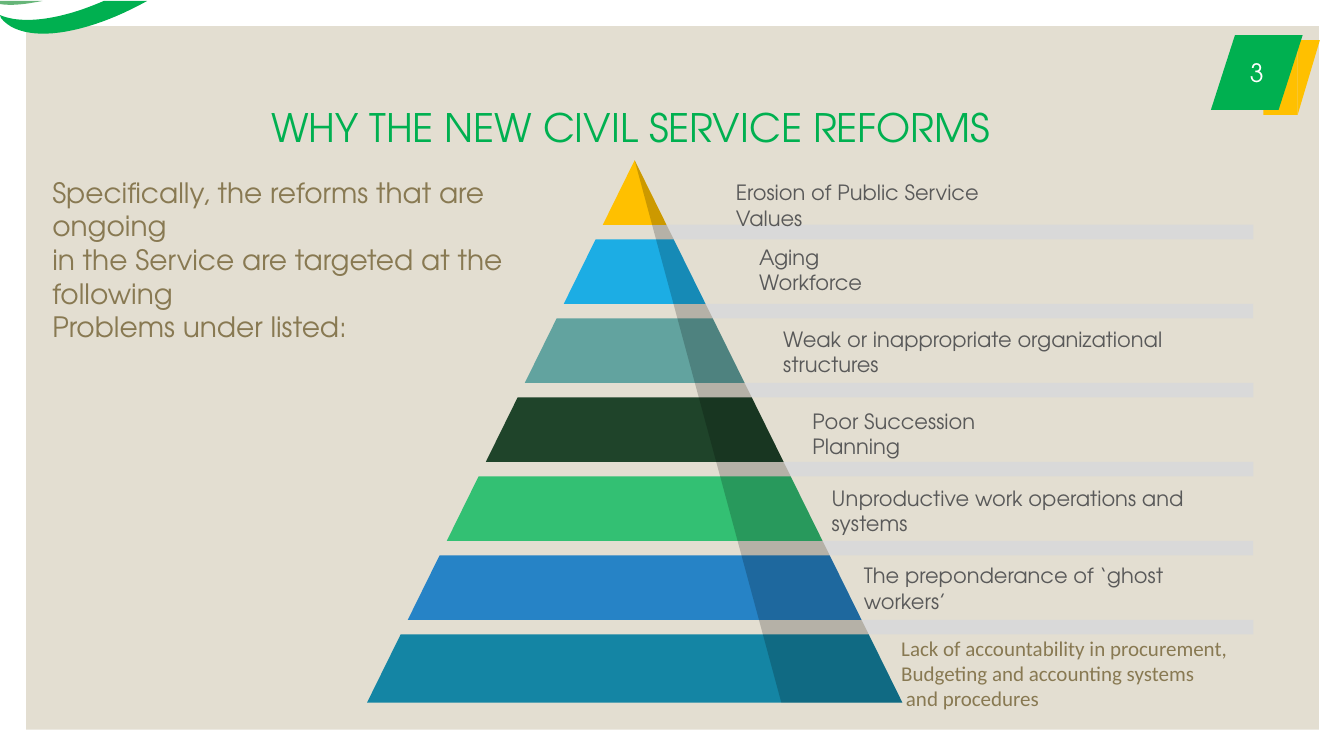
from collections import namedtuple
from dataclasses import dataclass

import pptx
import pptx.dml.color
import pptx.enum.shapes
import pptx.enum.text
import pptx.oxml
import pptx.oxml.ns
import pptx.util

Inches = pptx.util.Inches
MSO_SHAPE = pptx.enum.shapes.MSO_SHAPE
ANCHOR = pptx.enum.text.MSO_ANCHOR
ALIGN = pptx.enum.text.PP_ALIGN
Box = namedtuple("Box", "left top width height")
Label = namedtuple("Label", "lines left top width height font color")


@dataclass(frozen=True)
class Theme:
    font: str = "TeX Gyre Adventor"
    note_font: str = "Calibri"
    panel: str = "E3DED1"
    green: str = "00B050"
    leaf: str = "148E31"
    gold: str = "FFC000"
    bar: str = "D9D9D9"
    shade: str = "000000"
    white: str = "FFFFFF"
    label: str = "595959"
    tan: str = "887952"
    bands: tuple = ("FFC000", "1CADE4", "62A39F", "1F442A", "33C073", "2683C6", "1485A4")
    title_size: int = 28
    intro_size: int = 20
    number_size: int = 18
    label_size: int = 15


THEME = Theme()

LABELS = [
    Label([text], left, top, width, 0.35, THEME.font, THEME.label)
    for text, left, top, width in (
        ("Erosion of Public Service Values", 3.56, 0.27, 3.23),
        ("Aging Workforce", 3.79, 0.91, 1.75),
        ("Weak or inappropriate organizational structures", 4.03, 1.72, 4.63),
        ("Poor Succession Planning", 4.32, 2.54, 2.66),
        ("Unproductive work operations and systems", 4.51, 3.3, 4.23),
        ("The preponderance of ‘ghost workers’", 4.83, 4.07, 3.74),
    )
] + [
    Label(
        ["Lack of accountability in procurement,", "Budgeting and accounting systems", " and procedures"],
        5.2, 4.66, 3.8, 0.86, THEME.note_font, THEME.tan,
    )
]


def paint(shape, color, opacity=100):
    shape.shadow.inherit = False
    shape.fill.solid()
    shape.fill.fore_color.rgb = pptx.dml.color.RGBColor.from_string(color)
    shape.line.fill.background()
    if opacity < 100:
        srgb = shape.fill._xPr.find(".//" + pptx.oxml.ns.qn("a:srgbClr"))
        alpha = srgb.makeelement(pptx.oxml.ns.qn("a:alpha"), {"val": str(opacity * 1000)})
        srgb.append(alpha)


def add_preset(slide, kind, box, color):
    shape = slide.shapes.add_shape(kind, *map(Inches, box))
    paint(shape, color)
    return shape


def add_outline(slide, points, color, opacity=100):
    corners = [(Inches(x), Inches(y)) for x, y in points]
    builder = slide.shapes.build_freeform(*corners[0])
    builder.add_line_segments(corners[1:], close=True)
    paint(builder.convert_to_shape(), color, opacity)


def write(frame, lines, size, color, font=THEME.font, anchor=ANCHOR.MIDDLE, align=ALIGN.LEFT, spacing=None):
    frame.word_wrap = True
    frame.vertical_anchor = anchor
    for number, line in enumerate(lines):
        paragraph = frame.add_paragraph() if number else frame.paragraphs[0]
        paragraph.alignment = align
        paragraph.line_spacing = spacing
        run = paragraph.add_run()
        run.text = line
        run.font.name = font
        run.font.size = pptx.util.Pt(size)
        run.font.color.rgb = pptx.dml.color.RGBColor.from_string(color)


def add_text(slide, box, lines, size, color, **style):
    textbox = slide.shapes.add_textbox(*map(Inches, box))
    write(textbox.text_frame, lines, size, color, **style)


def curve(start, first, second, end, steps=24):
    points = []
    for step in range(steps + 1):
        t = step / steps
        weights = ((1 - t) ** 3, 3 * t * (1 - t) ** 2, 3 * t * t * (1 - t), t ** 3)
        points.append(tuple(
            sum(weight * value for weight, value in zip(weights, axis))
            for axis in zip(start, first, second, end)
        ))
    return points


def draw_swoosh(slide, box):
    def place(points):
        return [(box.left + x, box.top + y) for x, y in points]

    lower_edge = curve((0.01, 0.17), (0.23, 0.44), (0.85, 0.34), (box.width, 0))
    upper_edge = curve((1.03, 0), (0.62, 0.18), (0.23, 0.24), (0, 0.14))
    add_outline(slide, place(lower_edge + upper_edge), THEME.green)
    leaf_edge = curve((0, 0.03), (0.12, 0.05), (0.26, 0.03), (0.42, 0))
    add_outline(slide, place([(0, 0)] + leaf_edge), THEME.leaf, 65)


def draw_pyramid(slide, box):
    base, pitch, band_height, shade_start = 5.31, 0.784, 0.64, 4.11
    apex = box.left + base / 2
    bottom = box.top + box.height
    right = box.left + box.width

    def half(y):
        return (y - box.top) * base / 2 / box.height

    last = len(THEME.bands) - 1
    for level, color in enumerate(THEME.bands):
        top = box.top + level * pitch
        foot = bottom if level == last else top + band_height
        upper = [(apex - half(top), top), (apex + half(top), top)] if level else [(apex, top)]
        add_outline(slide, upper + [(apex + half(foot), foot), (apex - half(foot), foot)], color)
        if level < last:
            below = top + pitch
            add_outline(
                slide,
                [(apex + half(foot), foot), (right, foot), (right, below), (apex + half(below), below)],
                THEME.bar,
            )
    shade = [(apex, box.top), (box.left + base, bottom), (box.left + shade_start, bottom)]
    add_outline(slide, shade, THEME.shade, 20)
    for label in LABELS:
        area = Box(box.left + label.left, box.top + label.top, label.width, label.height)
        add_text(slide, area, label.lines, THEME.label_size, label.color, font=label.font)


def draw_page_number(slide, box, number):
    height, fold = 0.74, 0.22
    back_top = box.top + 0.05
    tip = add_preset(
        slide, MSO_SHAPE.ISOSCELES_TRIANGLE,
        Box(box.left + box.width - fold, back_top, fold, height), THEME.gold,
    )
    tip.adjustments[0] = 0
    tip._element.spPr.find(pptx.oxml.ns.qn("a:xfrm")).set("flipV", "1")
    add_preset(slide, MSO_SHAPE.RECTANGLE, Box(box.left + 0.52, back_top, 0.34, height), THEME.gold)
    front = add_preset(slide, MSO_SHAPE.PARALLELOGRAM, Box(box.left, box.top, 0.91, height), THEME.green)
    front.adjustments[0] = 0.322
    write(front.text_frame, [number], THEME.number_size, THEME.white, align=ALIGN.CENTER)


def draw_heading(slide, box):
    add_text(slide, box, ["WHY THE NEW CIVIL SERVICE REFORMS"], THEME.title_size, THEME.green, spacing=0.9)


def draw_intro(slide, box):
    lines = [
        "Specifically, the reforms that are ongoing",
        "in the Service are targeted at the following",
        "Problems under listed:",
    ]
    add_text(slide, box, lines, THEME.intro_size, THEME.tan, anchor=ANCHOR.TOP)


def main():
    deck = pptx.Presentation()
    deck.slide_width, deck.slide_height = Inches(13.33), Inches(7.5)
    slide = deck.slides.add_slide(deck.slide_layouts[6])
    add_preset(slide, MSO_SHAPE.RECTANGLE, Box(0.26, 0.26, 12.82, 6.98), THEME.panel)
    draw_swoosh(slide, Box(0, 0.01, 1.46, 0.44))
    draw_heading(slide, Box(2.59, 1.01, 8.25, 0.55))
    draw_pyramid(slide, Box(3.64, 1.59, 8.79, 5.38))
    draw_intro(slide, Box(0.42, 1.69, 5.31, 1.78))
    draw_page_number(slide, Box(12.01, 0.35, 1.08, 0.79), "3")
    deck.save("out.pptx")


if __name__ == "__main__":
    main()
